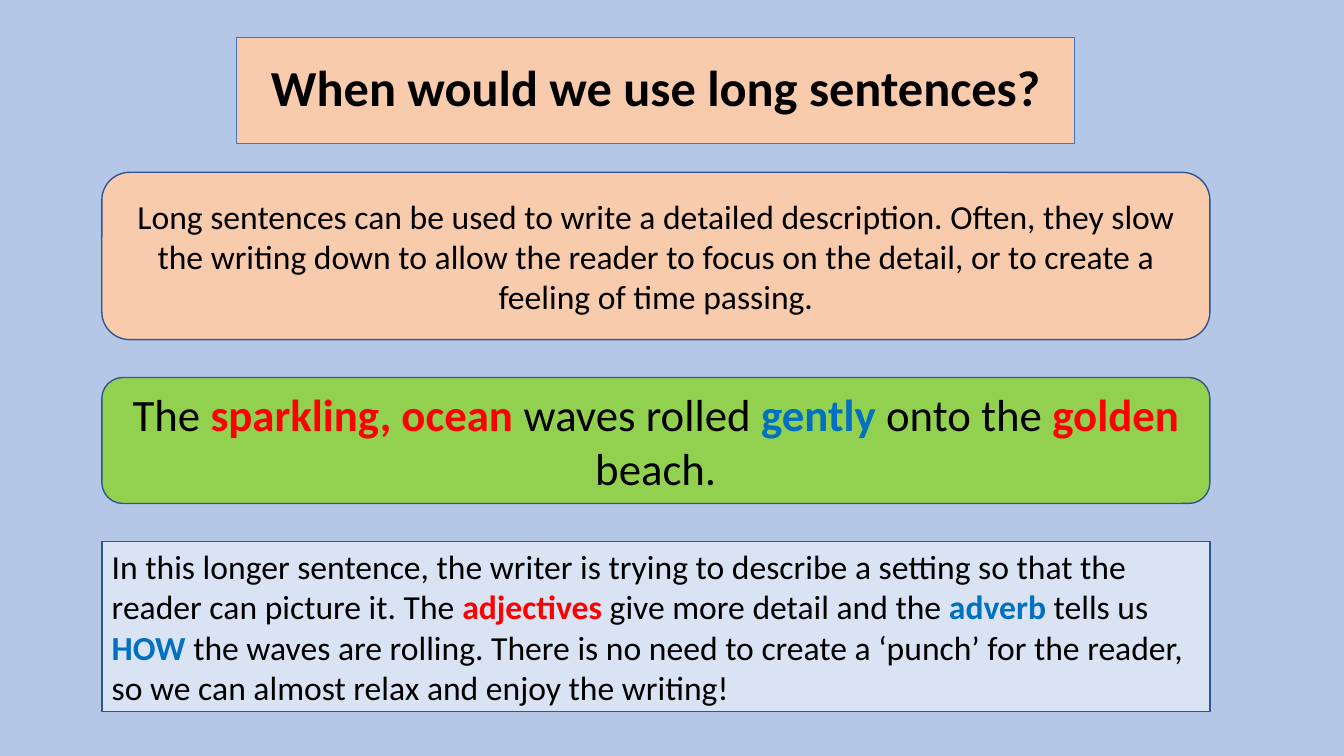
from pptx import Presentation
from pptx.dml.color import RGBColor
from pptx.enum.shapes import MSO_SHAPE
from pptx.enum.text import MSO_ANCHOR, MSO_AUTO_SIZE, PP_ALIGN
from pptx.util import Inches, Pt

RECT, ROUND = MSO_SHAPE.RECTANGLE, MSO_SHAPE.ROUNDED_RECTANGLE
LEFT, CENTER = PP_ALIGN.LEFT, PP_ALIGN.CENTER
MIDDLE, FIXED = MSO_ANCHOR.MIDDLE, MSO_AUTO_SIZE.NONE

WIDTH, HEIGHT = Inches(13.33), Inches(7.5)
FONT = "Calibri"
COLORS = {
    "back": "B4C7E7", "peach": "F8CBAD", "green": "92D050", "pale": "DAE3F3",
    "edge": "325491", "rim": "4472C4",
    "text": "000000", "adj": "FF0000", "adv": "0070C0",
}

# Panels share one column; each row starts a fixed gap below the last
PANEL_X, PANEL_W = 1.01, 10.99
TOP, GAP = 1.71, 0.375

# Each panel: shape, fill, height, size, alignment, (text, color) parts
PANELS = [
    (ROUND, "peach", 1.66, 24, CENTER, [
        ("Long sentences can be used to write a detailed description. "
         "Often, they slow the writing down to allow the reader to focus on "
         "the detail, or to create a feeling of time passing.", "text")]),
    (ROUND, "green", 1.25, 32, CENTER, [
        ("The ", "text"), ("sparkling, ocean ", "adj"),
        ("waves rolled ", "text"), ("gently", "adv"),
        (" onto the ", "text"), ("golden", "adj"), (" beach.", "text")]),
    (RECT, "pale", 1.69, 24, LEFT, [
        ("In this longer sentence, the writer is trying to describe a "
         "setting so that the reader can picture it. The ", "text"),
        ("adjectives ", "adj"), ("give more detail and the ", "text"),
        ("adverb", "adv"), (" tells us ", "text"), ("HOW", "adv"),
        (" the waves are rolling. There is no need to create a ‘punch’ for "
         "the reader, so we can almost relax and enjoy the writing!",
         "text")]),
]


def color(name):
    return RGBColor.from_string(COLORS[name])


def paint(shape, fill, line, width):
    shape.fill.solid()
    shape.fill.fore_color.rgb = color(fill)
    shape.line.color.rgb = color(line)
    shape.line.width = Pt(width)


def write(shape, parts, size, align, bold=False):
    frame = shape.text_frame
    frame.word_wrap = True
    frame.auto_size = FIXED
    frame.vertical_anchor = MIDDLE
    para = frame.paragraphs[0]
    para.alignment = align
    for text, tint in parts:
        run = para.add_run()
        run.text = text
        run.font.name = FONT
        run.font.size = Pt(size)
        run.font.bold = bold or tint != "text"
        run.font.color.rgb = color(tint)
    return para


def add_title(slide, text):
    title = slide.shapes.title
    title.left, title.top = Inches(2.35), Inches(0.37)
    title.width, title.height = Inches(8.31), Inches(1.05)
    paint(title, "peach", "rim", 0.75)
    para = write(title, [(text, "text")], 36, CENTER, bold=True)
    para.line_spacing = 0.9


def add_panel(slide, top, kind, fill, height, size, align, parts):
    panel = slide.shapes.add_shape(
        kind, Inches(PANEL_X), Inches(top), Inches(PANEL_W), Inches(height))
    panel.shadow.inherit = False
    paint(panel, fill, "edge", 1)
    write(panel, parts, size, align)


def main():
    deck = Presentation()
    deck.slide_width, deck.slide_height = WIDTH, HEIGHT
    slide = deck.slides.add_slide(deck.slide_layouts[5])
    back = slide.background.fill
    back.solid()
    back.fore_color.rgb = color("back")

    add_title(slide, "When would we use long sentences?")
    top = TOP
    for kind, fill, height, size, align, parts in PANELS:
        add_panel(slide, top, kind, fill, height, size, align, parts)
        top += height + GAP

    deck.save("out.pptx")


if __name__ == "__main__":
    main()
